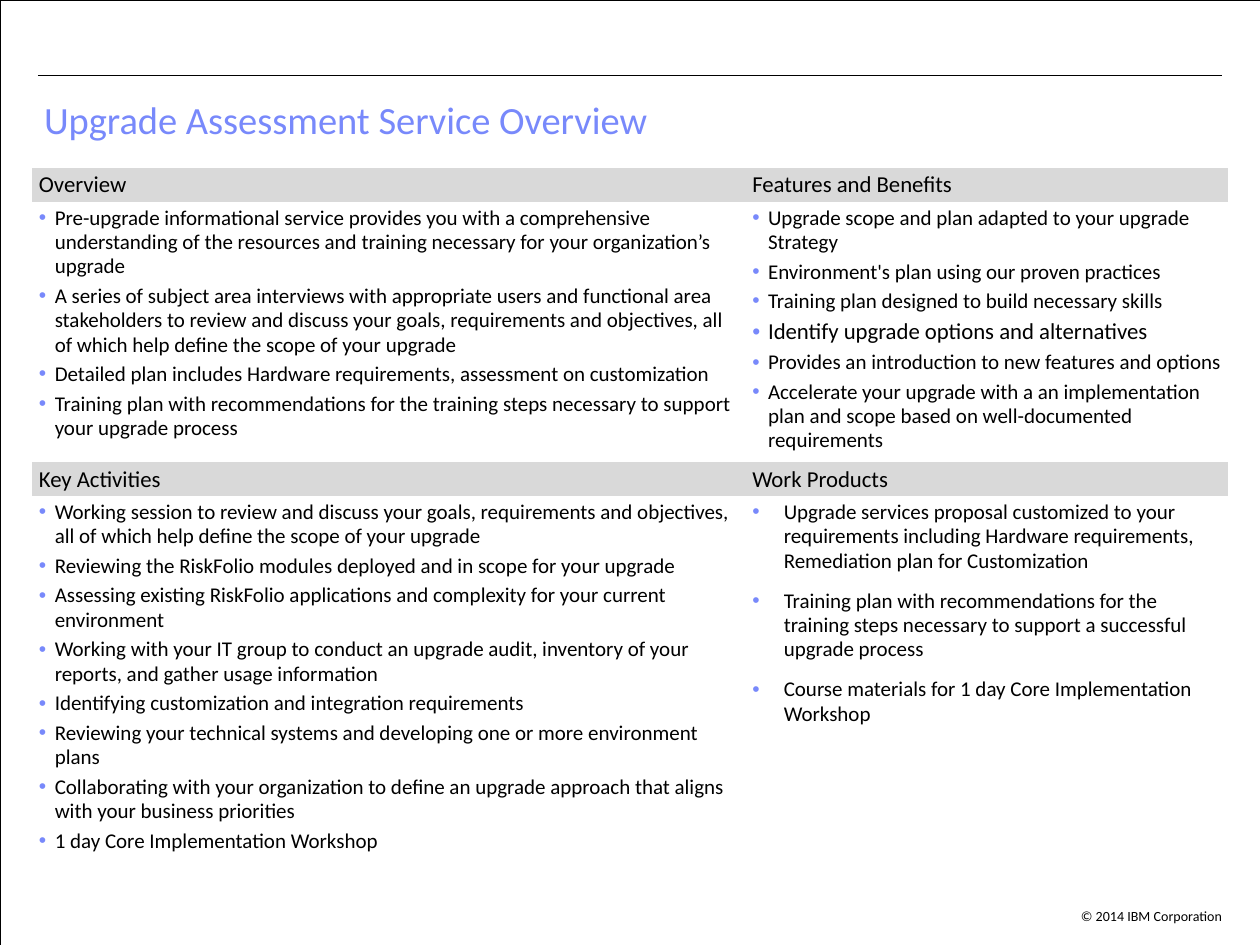
from lxml.etree import SubElement
from pptx import Presentation
from pptx.dml.color import RGBColor
from pptx.enum.shapes import MSO_CONNECTOR as Conn, MSO_SHAPE as Shape
from pptx.enum.text import MSO_ANCHOR as Anchor, PP_ALIGN as Align
from pptx.oxml.ns import qn
from pptx.util import Pt

BLACK = RGBColor(0x00, 0x00, 0x00)
BLUE = RGBColor(0x78, 0x89, 0xFB)
GREY = RGBColor(0xD9, 0xD9, 0xD9)
PLAIN = "{2D5ABB26-0587-4C30-8999-92F81FD0307C}"  # table style without grid
BIG = "Identify upgrade options and alternatives"

HEADS = [["Overview", "Features and Benefits"], ["Key Activities", "Work Products"]]
LISTS = [
    [
        [
            "Pre-upgrade informational service provides you with a comprehensive "
            "understanding of the resources and training necessary for your "
            "organization’s upgrade",
            "A series of subject area interviews with appropriate users and functional "
            "area stakeholders to review and discuss your goals, requirements and "
            "objectives, all of which help define the scope of your upgrade",
            "Detailed plan includes Hardware requirements, assessment on customization",
            "Training plan with recommendations for the training steps necessary to "
            "support your upgrade process",
        ],
        [
            "Upgrade scope and plan adapted to your upgrade Strategy",
            "Environment's plan using our proven practices",
            "Training plan designed to build necessary skills",
            BIG,
            "Provides an introduction to new features and options",
            "Accelerate your upgrade with a an implementation plan and scope based on "
            "well-documented requirements",
        ],
    ],
    [
        [
            "Working session to review and discuss your goals, requirements and "
            "objectives, all of which help define the scope of your upgrade",
            "Reviewing the RiskFolio modules deployed and in scope for your upgrade",
            "Assessing existing RiskFolio applications and complexity for your current "
            "environment",
            "Working with your IT group to conduct an upgrade audit, inventory of your "
            "reports, and gather usage information",
            "Identifying customization and integration requirements",
            "Reviewing your technical systems and developing one or more environment plans",
            "Collaborating with your organization to define an upgrade approach that "
            "aligns with your business priorities",
            "1 day Core Implementation Workshop",
        ],
        [
            "Upgrade services proposal customized to your requirements including "
            "Hardware requirements, Remediation plan for Customization",
            "Training plan with recommendations for the training steps necessary to "
            "support a successful upgrade process",
            "Course materials for 1 day Core Implementation Workshop",
        ],
    ],
]


def assign(item, style):
    for name, value in style.items():
        setattr(item, name, value)


class Deck:
    def __init__(self, font):
        self.font = font
        self.prs = Presentation()
        assign(self.prs, {"slide_width": Pt(720), "slide_height": Pt(540)})
        self.slide = self.prs.slides.add_slide(self.prs.slide_layouts[5])
        self.shapes = self.slide.shapes

    def label(self, para, text, size, color=BLACK, **style):
        run = para.add_run()
        run.text = text
        assign(run.font, {"name": self.font, "size": Pt(size), "bold": False})
        run.font.color.rgb = color
        assign(para, style)

    def title(self, text, x, y, w, h):
        box = self.shapes.title
        assign(box, {"left": Pt(x), "top": Pt(y), "width": Pt(w), "height": Pt(h)})
        frame = box.text_frame
        assign(frame, {"vertical_anchor": Anchor.TOP, "word_wrap": True})
        self.label(frame.paragraphs[0], text, 22, BLUE,
                   alignment=Align.LEFT, line_spacing=0.9)

    def note(self, text, x, y, w, h):
        frame = self.shapes.add_textbox(Pt(x), Pt(y), Pt(w), Pt(h)).text_frame
        frame.word_wrap = True
        self.label(frame.paragraphs[0], text, 8, alignment=Align.RIGHT)

    def rule(self, x, y, end):
        line = self.shapes.add_connector(Conn.STRAIGHT, Pt(x), Pt(y), Pt(end), Pt(y))
        line.line.color.rgb = BLACK
        line.line.width = Pt(0.75)
        SubElement(line._element.spPr, qn("a:effectLst"))

    def border(self):
        rect = self.shapes.add_shape(Shape.RECTANGLE, 0, 0,
                                     self.prs.slide_width, self.prs.slide_height)
        rect.shadow.inherit = False
        rect.fill.background()
        rect.line.color.rgb = BLACK
        rect.line.width = Pt(0.25)

    def grid(self, x, y, cols, rows):
        """Add an unstyled table with the given column widths and row heights."""
        frame = self.shapes.add_table(len(rows), len(cols), Pt(x), Pt(y),
                                      Pt(sum(cols)), Pt(sum(rows)))
        table = frame.table
        assign(table, {"first_row": False, "horz_banding": False})
        table._tbl.tblPr.find(qn("a:tableStyleId")).text = PLAIN
        for col, width in zip(table.columns, cols):
            col.width = Pt(width)
        for row, height in zip(table.rows, rows):
            row.height = Pt(height)
        return table

    def pad(self, cell, side):
        assign(cell, {"margin_left": Pt(side), "margin_right": Pt(side),
                      "margin_top": Pt(2.2), "margin_bottom": Pt(2.2)})

    def head(self, cell, text, side):
        self.pad(cell, side)
        cell.fill.solid()
        cell.fill.fore_color.rgb = GREY
        self.label(cell.text_frame.paragraphs[0], text, 13, line_spacing=0.95)

    def bullet(self, para, indent):
        props = para._p.get_or_add_pPr()
        props.set("marL", str(Pt(indent)))
        props.set("indent", str(-Pt(indent)))
        tint = SubElement(props, qn("a:buClr"))
        SubElement(tint, qn("a:srgbClr"), val=str(BLUE))
        SubElement(props, qn("a:buFont"), typeface="Arial")
        SubElement(props, qn("a:buChar"), char="•")

    def items(self, cell, texts, side, indent, after):
        self.pad(cell, side)
        cell.fill.background()
        frame = cell.text_frame
        for i, text in enumerate(texts):
            para = frame.add_paragraph() if i else frame.paragraphs[0]
            self.bullet(para, indent)
            self.label(para, text, 13 if text == BIG else 12, line_spacing=0.95,
                       space_before=Pt(3 if i else 0), space_after=Pt(after))


def main():
    deck = Deck("Calibri")
    deck.rule(21.6, 43.2, 698.4)
    deck.note("© 2014 IBM Corporation", 597.6, 514.8, 108, 14.4)
    deck.border()
    deck.title("Upgrade Assessment Service Overview", 18, 54, 684, 61.2)

    table = deck.grid(18, 96, [409.7, 274.3], [19.4, 148.8, 19.4, 202.6])
    for band in range(2):
        for col, side in enumerate([4.3, 2.2]):
            wide = band == 1 and col == 1
            deck.head(table.cell(2 * band, col), HEADS[band][col], side)
            deck.items(table.cell(2 * band + 1, col), LISTS[band][col], side,
                       indent=18 if wide else 9, after=6 if wide else 0)
    deck.prs.save("out.pptx")


if __name__ == "__main__":
    main()
